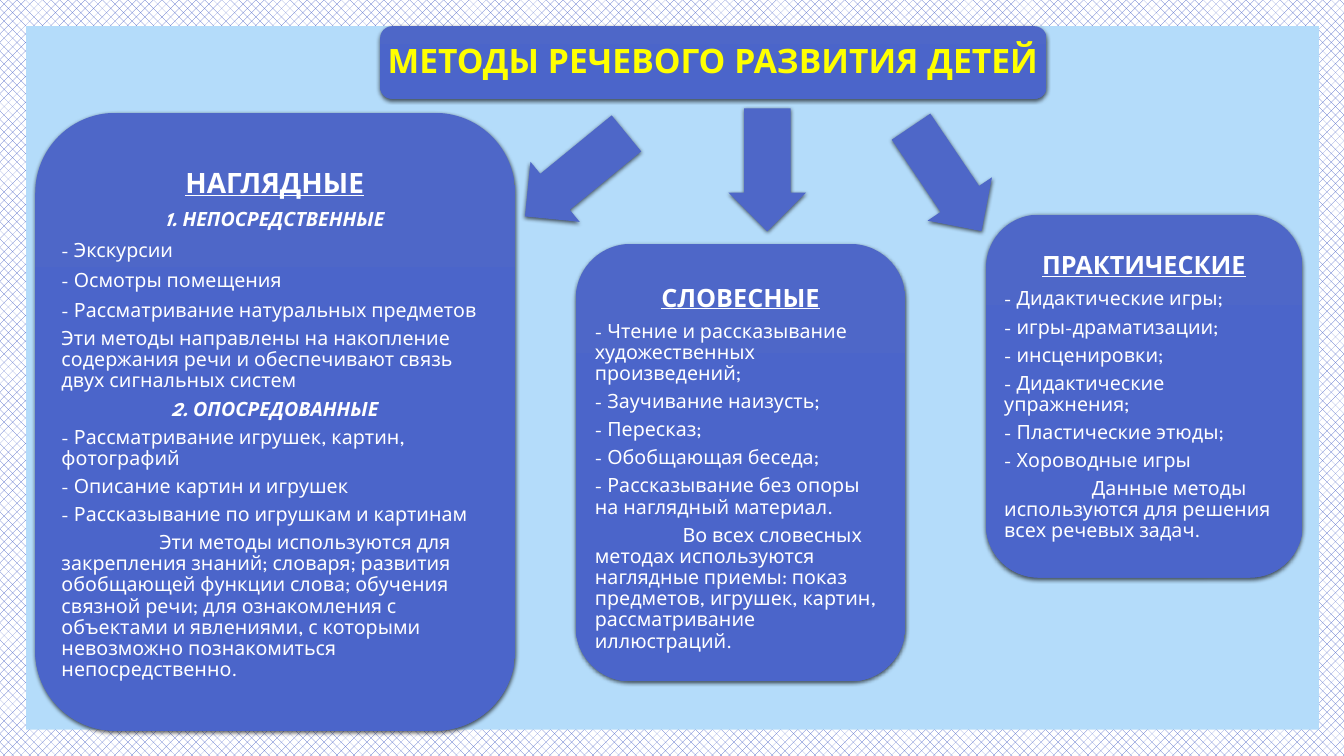
from copy import deepcopy
from dataclasses import dataclass

from lxml import etree
from pptx import Presentation
from pptx.dml.color import RGBColor
from pptx.enum.dml import MSO_PATTERN
from pptx.enum.shapes import MSO_SHAPE
from pptx.enum.text import MSO_ANCHOR, MSO_AUTO_SIZE, PP_ALIGN
from pptx.oxml.ns import qn
from pptx.util import Inches, Pt

PANEL = MSO_SHAPE.FLOWCHART_ALTERNATE_PROCESS
ARROW = MSO_SHAPE.RIGHT_ARROW
RECTANGLE = MSO_SHAPE.RECTANGLE
CENTER, LEFT = PP_ALIGN.CENTER, PP_ALIGN.LEFT
TOP, MIDDLE = MSO_ANCHOR.TOP, MSO_ANCHOR.MIDDLE
NO_AUTOFIT = MSO_AUTO_SIZE.NONE
FORTY_PERCENT = MSO_PATTERN.from_xml("pct40")
COMPARISON_LAYOUT = 4


@dataclass(frozen=True)
class Theme:
    font: str = "League Spartan"
    blue: RGBColor = RGBColor(0x4E, 0x67, 0xC8)
    blue_middle: RGBColor = RGBColor(0x4B, 0x65, 0xCA)
    blue_end: RGBColor = RGBColor(0x4A, 0x64, 0xC9)
    sky: RGBColor = RGBColor(0xB4, 0xDC, 0xFA)
    white: RGBColor = RGBColor(0xFF, 0xFF, 0xFF)
    yellow: RGBColor = RGBColor(0xFF, 0xFF, 0x00)
    outline: str = "D85C00"
    title_size: int = 24
    body_size: int = 14


THEME = Theme()


def add_blue_shape(kind, left, top, width, height):
    """Add a borderless blue shape with a soft shadow below it."""
    shape = slide.shapes.add_shape(
        kind, Inches(left), Inches(top), Inches(width), Inches(height))
    shape.line.fill.background()
    if kind == PANEL:
        shape.fill.gradient()
        shape.fill.gradient_angle = 270
        stop_list = shape.element.spPr.find(".//" + qn("a:gsLst"))
        stop_list.insert(1, deepcopy(stop_list[0]))
        colors = (THEME.blue, THEME.blue_middle, THEME.blue_end)
        for stop, position, color in zip(shape.fill.gradient_stops, (0, 0.5, 1), colors):
            stop.position = position
            stop.color.rgb = color
    else:
        shape.fill.solid()
        shape.fill.fore_color.rgb = THEME.blue
    shape.shadow.inherit = False
    effects = shape.element.spPr.find(qn("a:effectLst"))
    shadow = etree.SubElement(
        effects, qn("a:outerShdw"), blurRad=str(Pt(3)), dist=str(Pt(1)),
        dir="5400000", algn="ctr", rotWithShape="0")
    black = etree.SubElement(shadow, qn("a:srgbClr"), val="000000")
    etree.SubElement(black, qn("a:alpha"), val="63000")
    return shape


def fill_placeholder(placeholder, box, anchor, rows):
    """Place a placeholder on top and write rows of (text, options)."""
    placeholder.left, placeholder.top, placeholder.width, placeholder.height = map(Inches, box)
    shape_tree = placeholder.element.getparent()
    shape_tree.append(placeholder.element)
    frame = placeholder.text_frame
    frame.text = "\n".join(text for text, options in rows)
    frame.word_wrap = True
    frame.auto_size = NO_AUTOFIT
    frame.vertical_anchor = anchor
    frame.margin_left = frame.margin_right = Inches(0.03)
    frame.margin_top = frame.margin_bottom = Inches(0.03)
    for paragraph, (text, options) in zip(frame.paragraphs, rows):
        size = options.get("size", THEME.body_size)
        properties = paragraph._p.get_or_add_pPr()
        properties.set("marL", "0")
        properties.set("indent", str(Inches(options.get("indent", 0))))
        etree.SubElement(properties, qn("a:buNone"))
        paragraph.alignment = options.get("align", LEFT)
        paragraph.line_spacing = options.get("spacing", 0.9)
        paragraph.space_before = Pt(0)
        paragraph.space_after = Pt(size * 0.35)
        for run in paragraph.runs:
            run.font.name = THEME.font
            run.font.size = Pt(size)
            run.font.color.rgb = options.get("color", THEME.white)
            run.font.bold = options.get("bold", False)
            run.font.italic = options.get("italic", False)
            run.font.underline = options.get("underline", False)


presentation = Presentation()
presentation.slide_width = Inches(13.33)
presentation.slide_height = Inches(7.5)
slide = presentation.slides.add_slide(presentation.slide_layouts[COMPARISON_LAYOUT])
title, *bodies = slide.placeholders
unused_body = bodies.pop()
unused_body.element.getparent().remove(unused_body.element)

background = slide.background.fill
background.patterned()
background.pattern = FORTY_PERCENT
background.fore_color.rgb = THEME.blue
background.back_color.rgb = THEME.white

backdrop = slide.shapes.add_shape(
    RECTANGLE, Inches(0.26), Inches(0.26), Inches(12.82), Inches(6.98))
backdrop.fill.solid()
backdrop.fill.fore_color.rgb = THEME.sky
backdrop.line.fill.background()
backdrop.shadow.inherit = False

# Title
add_blue_shape(PANEL, 3.77, 0.26, 6.61, 0.72)
title_style = {"size": THEME.title_size, "align": CENTER, "bold": True, "color": THEME.yellow}
fill_placeholder(title, (3.8, 0.3, 6.54, 0.65), MIDDLE,
                 [("МЕТОДЫ РЕЧЕВОГО РАЗВИТИЯ ДЕТЕЙ", title_style)])
title_run = title.text_frame.paragraphs[0].runs[0]
title_properties = title_run._r.get_or_add_rPr()
outline = etree.Element(qn("a:ln"), w=str(Pt(0.75)))
outline_fill = etree.SubElement(outline, qn("a:solidFill"))
etree.SubElement(outline_fill, qn("a:srgbClr"), val=THEME.outline)
title_properties.insert(0, outline)

# Arrows from the title to the three groups of methods
for left, top, width, rotation in (
        (5.06, 1.35, 1.3, 140.7), (7, 1.3, 1.22, 90), (8.76, 1.39, 1.25, 56)):
    arrow = add_blue_shape(ARROW, left, top, width, 0.77)
    arrow.adjustments[0], arrow.adjustments[1] = 0.6, 0.5
    arrow.rotation = rotation

# Groups of methods: panel, text box, heading size, heading, rows
subheading = {"align": CENTER, "bold": True, "italic": True}
loose = {"spacing": 1.0}
plain = {}
method_groups = (
    ((0.35, 1.12, 4.76, 6.13), (0.58, 1.65, 4.29, 5.37), 20, "НАГЛЯДНЫЕ", [
        ("1. НЕПОСРЕДСТВЕННЫЕ", subheading),
        ("- Экскурсии", loose),
        ("- Осмотры помещения", loose),
        ("- Рассматривание натуральных предметов", loose),
        ("Эти методы направлены на накопление содержания речи и обеспечивают "
         "связь двух сигнальных систем", plain),
        ("2. ОПОСРЕДОВАННЫЕ", subheading),
        ("- Рассматривание игрушек, картин, фотографий", plain),
        ("- Описание картин и игрушек", plain),
        ("- Рассказывание по игрушкам и картинам", plain),
        ("Эти методы используются для закрепления знаний; словаря; развития "
         "обобщающей функции слова; обучения связной речи; для ознакомления с "
         "объектами и явлениями, с которыми невозможно познакомиться "
         "непосредственно.", {"indent": 0.97}),
    ]),
    ((5.71, 2.42, 3.27, 4.34), (5.87, 2.8, 2.95, 3.8), 18, "СЛОВЕСНЫЕ", [
        ("- Чтение и рассказывание художественных произведений;", plain),
        ("- Заучивание наизусть;", plain),
        ("- Пересказ;", plain),
        ("- Обобщающая беседа;", plain),
        ("- Рассказывание без опоры на наглядный материал.", plain),
        ("Во всех словесных методах используются наглядные приемы: показ "
         "предметов, игрушек, картин, рассматривание иллюстраций.", {"indent": 0.87}),
    ]),
    ((9.78, 2.13, 3.14, 3.6), (9.93, 2.48, 2.83, 3.09), 18, "ПРАКТИЧЕСКИЕ", [
        ("- Дидактические игры;", plain),
        ("- игры-драматизации;", plain),
        ("- инсценировки;", plain),
        ("- Дидактические упражнения;", plain),
        ("- Пластические этюды;", plain),
        ("- Хороводные игры", plain),
        ("Данные методы используются для решения всех речевых задач.", {"indent": 0.87}),
    ]),
)
for body, (panel_box, text_box, heading_size, heading, rows) in zip(bodies, method_groups):
    add_blue_shape(PANEL, *panel_box)
    heading_style = {"size": heading_size, "align": CENTER, "bold": True, "underline": True}
    fill_placeholder(body, text_box, TOP, [(heading, heading_style), *rows])

presentation.save("out.pptx")
